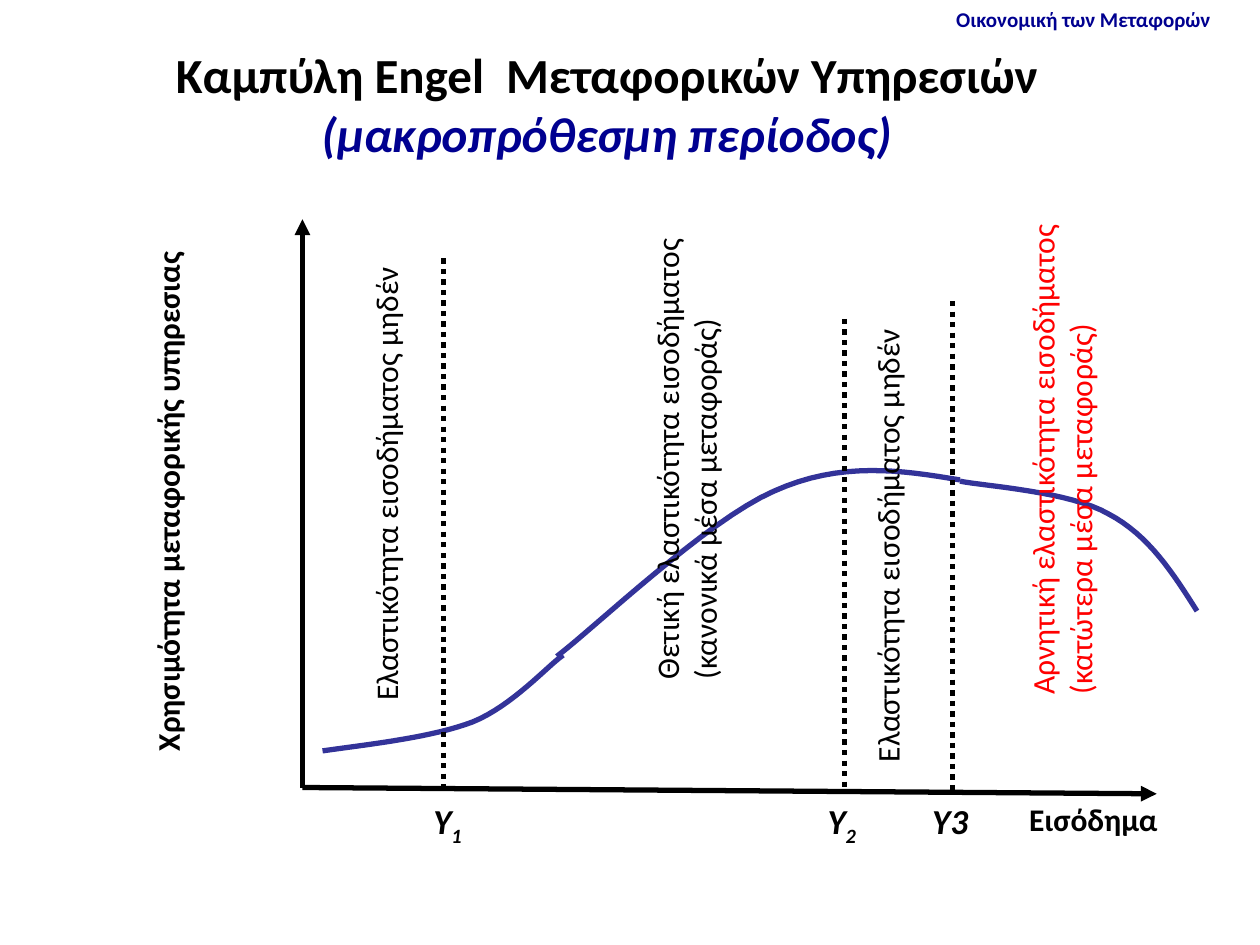
from lxml import etree
from pptx import Presentation
from pptx.dml.color import RGBColor
from pptx.enum.dml import MSO_LINE
from pptx.enum.shapes import MSO_CONNECTOR
from pptx.enum.text import MSO_ANCHOR, MSO_AUTO_SIZE, PP_ALIGN
from pptx.oxml.ns import qn
from pptx.util import Pt

STRAIGHT = MSO_CONNECTOR.STRAIGHT
DOTTED = MSO_LINE.ROUND_DOT
LEFT, CENTER = PP_ALIGN.LEFT, PP_ALIGN.CENTER
FONT = "Calibri"
BLACK, NAVY, INDIGO, RED = "000000", "000090", "333399", "FF0000"
LINE_WIDTH = 3
CURVE_STEPS = 16

# Content: lengths in points
HEADER = "Οικονομική των Μεταφορών"
TITLE = "Καμπύλη Engel  Μεταφορικών Υπηρεσιών"
SUBTITLE = "(μακροπρόθεσμη περίοδος)"
INCOME_LABEL = "Εισόδημα"
ZERO_ELASTICITY = "Ελαστικότητα εισοδήματος μηδέν"

ORIGIN, UTILITY_END, INCOME_END = (172.8, 450), (172.8, 125.3), (661, 453.6)
BASELINE = 453.6

# Income thresholds: line x, line top, label left, label, subscript
THRESHOLDS = [
    (253.4, 147.6, 240.5, "Υ", "1"),
    (482.4, 182.2, 465.8, "Υ", "2"),
    (544.3, 172.1, 525.6, "Υ3", ""),
]

# Curve pieces: start point, then two control points and an end point per arc
CURVES = [
    [(184.3, 429.1), (215.3, 424.8), (247, 421.2), (270, 412.6),
     (293, 403.2), (313.2, 380.2), (321.8, 374.4)],
    [(548.6, 274.3), (514.8, 268.6), (480.2, 263.5), (442.1, 280.8),
     (403.9, 297.4), (339.1, 359.3), (318.2, 375.1)],
    [(684, 349.2), (670.3, 327.6), (656.6, 306), (633.6, 293.8),
     (611.3, 280.8), (563, 277.9), (548.6, 275)],
]

# Upright labels: box before turning, lines, colour, bold, alignment
UPRIGHT_LABELS = [
    ((-56.2, 272.2, 303.8, 28.8), ["Χρησιμότητα μεταφορικής υπηρεσιας"], BLACK, True, CENTER),
    ((68.4, 262.1, 303.8, 28.8), [ZERO_ELASTICITY], BLACK, False, CENTER),
    ((257, 234.7, 270, 51.1),
     ["Θετική ελαστικότητα εισοδήματος", "(κανονικά μέσα μεταφοράς)"], BLACK, False, LEFT),
    ((355, 297.4, 303.8, 28.8), [ZERO_ELASTICITY], BLACK, False, CENTER),
    ((463, 234.7, 287.3, 51.1),
     ["Αρνητική ελαστικότητα εισοδήματος", "(κατώτερα μέσα μεταφοράς)"], RED, False, LEFT),
]


def color(value):
    return RGBColor.from_string(value)


def add_run(paragraph, text, size, fill=BLACK, bold=False, italic=False):
    run = paragraph.add_run()
    run.text = text
    font = run.font
    font.name, font.size, font.bold, font.italic = FONT, Pt(size), bold, italic
    font.color.rgb = color(fill)
    return run


def add_text(slide, box, lines, size, fill=BLACK, bold=False, italic=False,
             align=LEFT, rotation=0, wrap=False):
    shape = slide.shapes.add_textbox(*map(Pt, box))
    shape.rotation = rotation
    frame = shape.text_frame
    frame.word_wrap = wrap
    for index, line in enumerate(lines):
        paragraph = frame.paragraphs[0] if index == 0 else frame.add_paragraph()
        paragraph.alignment = align
        add_run(paragraph, line, size, fill, bold, italic)
    return shape


def add_line(slide, start, end, dash=None, arrow=False):
    connector = slide.shapes.add_connector(STRAIGHT, *map(Pt, start + end))
    line = connector.line
    line.width = Pt(LINE_WIDTH)
    line.color.rgb = color(BLACK)
    if dash:
        line.dash_style = dash
    if arrow:
        etree.SubElement(line._get_or_add_ln(), qn("a:tailEnd"), type="triangle")
    etree.SubElement(connector._element.spPr, qn("a:effectLst"))


def bezier(points, t):
    weights = ((1 - t) ** 3, 3 * t * (1 - t) ** 2, 3 * t ** 2 * (1 - t), t ** 3)
    return tuple(Pt(sum(w * p[axis] for w, p in zip(weights, points))) for axis in (0, 1))


def add_curve(slide, points):
    vertices = [bezier(points[first:first + 4], step / CURVE_STEPS)
                for first in range(0, len(points) - 1, 3)
                for step in range(1, CURVE_STEPS + 1)]
    builder = slide.shapes.build_freeform(*map(Pt, points[0]))
    builder.add_line_segments(vertices, close=False)
    shape = builder.convert_to_shape()
    shape.shadow.inherit = False
    shape.fill.background()
    shape.line.color.rgb = color(INDIGO)
    shape.line.width = Pt(LINE_WIDTH)


def main():
    presentation = Presentation()
    presentation.slide_width, presentation.slide_height = Pt(720), Pt(540)
    slide = presentation.slides.add_slide(presentation.slide_layouts[5])

    # Header and title
    add_text(slide, (539.3, 0, 162, 21.6), [HEADER], 12, NAVY, bold=True)
    title = slide.shapes.title
    title.left, title.top, title.width, title.height = map(Pt, (0, 27.4, 693.4, 63.4))
    frame = title.text_frame
    frame.auto_size = MSO_AUTO_SIZE.NONE
    frame.vertical_anchor = MSO_ANCHOR.MIDDLE
    paragraph = frame.paragraphs[0]
    paragraph.alignment = CENTER
    add_run(paragraph, TITLE, 28, bold=True)
    paragraph.add_line_break()
    add_run(paragraph, SUBTITLE, 28, NAVY, bold=True, italic=True)

    # Axes
    add_line(slide, ORIGIN, UTILITY_END, arrow=True)
    add_line(slide, ORIGIN, INCOME_END, arrow=True)
    add_text(slide, (581, BASELINE, 89.3, 28.8), [INCOME_LABEL], 18, bold=True)

    # Engel curve
    for points in CURVES:
        add_curve(slide, points)

    # Income thresholds
    for x, top, label_left, label, subscript in THRESHOLDS:
        add_line(slide, (x, top), (x, BASELINE), dash=DOTTED)
        shape = add_text(slide, (label_left, BASELINE, 54, 31.7), [label], 20,
                         bold=True, italic=True, wrap=True)
        if subscript:
            run = add_run(shape.text_frame.paragraphs[0], subscript, 20, bold=True, italic=True)
            run.font._element.set("baseline", "-25000")

    # Upright labels
    for box, lines, fill, bold, align in UPRIGHT_LABELS:
        add_text(slide, box, lines, 18, fill, bold, align=align, rotation=270,
                 wrap=align == CENTER)

    presentation.save("out.pptx")


if __name__ == "__main__":
    main()
